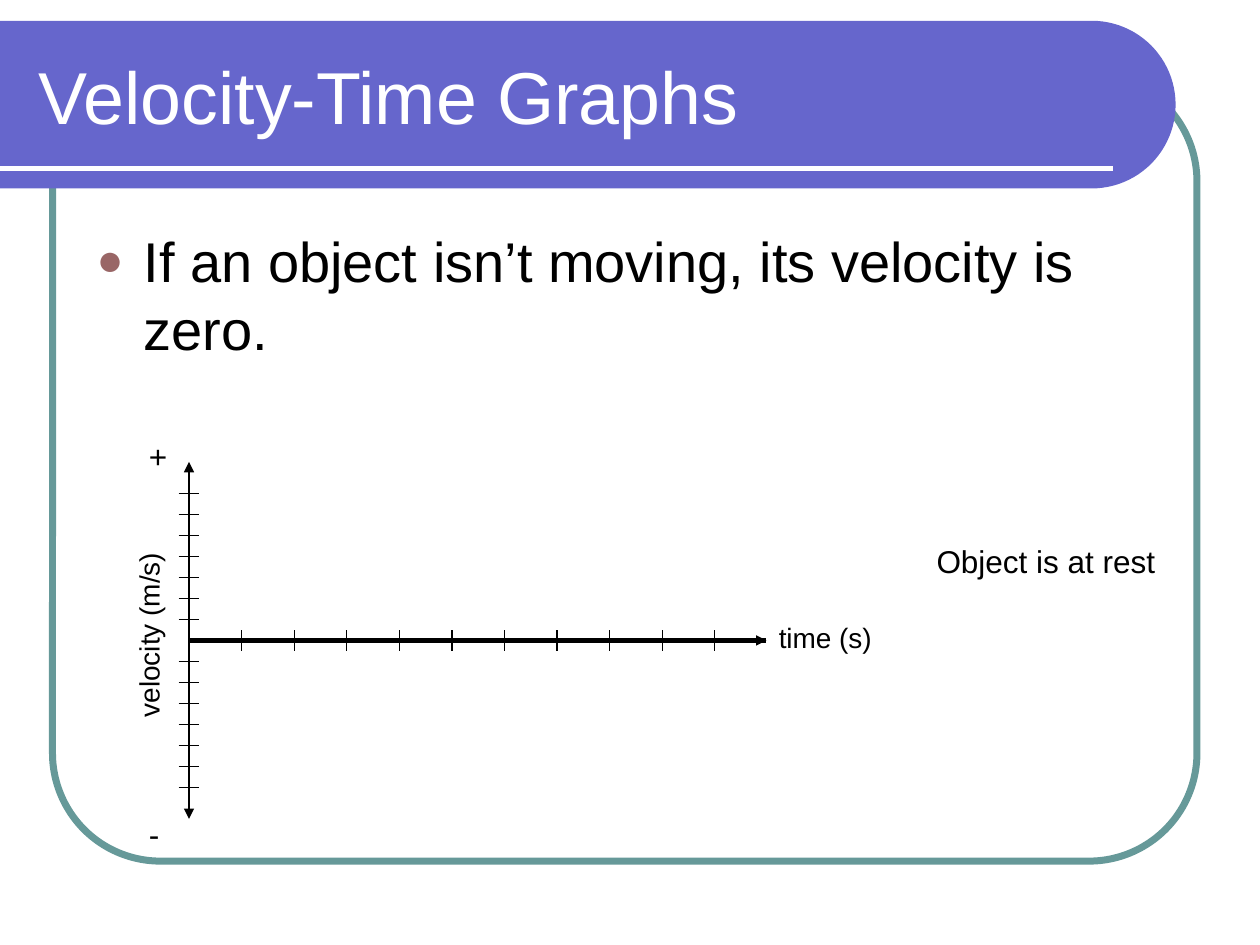
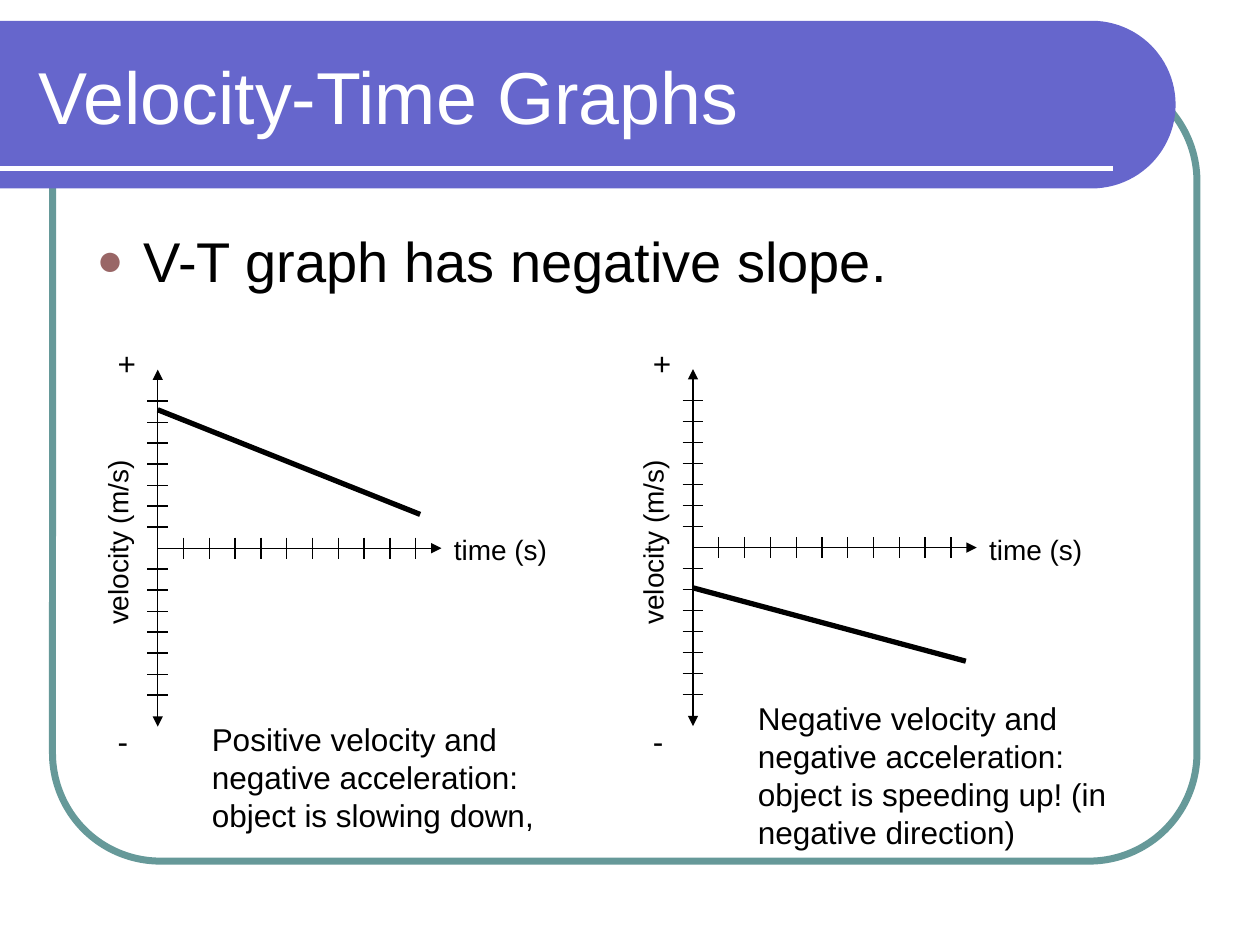
"""Build two slides on reading velocity-time graphs."""
from dataclasses import dataclass
from math import cos, pi, sin

from lxml.etree import SubElement
from pptx import Presentation
from pptx.dml.color import RGBColor
from pptx.enum.shapes import MSO_CONNECTOR as Conn, MSO_SHAPE as Shape
from pptx.enum.text import MSO_ANCHOR as Anchor, PP_ALIGN as Align
from pptx.oxml.ns import qn
from pptx.util import Cm, Pt

COLORS = {"band": "6666CC", "frame": "669999", "bullet": "996666",
          "ink": "000000", "paper": "FFFFFF"}
FONT = "Arial"
TICK_STEP = 1.27 / 3
TICK_HALF = 0.21
TICKS_PER_SIDE = 7
TIME_TICKS = 10
AXIS_HALF = 3.6

Point = tuple[float, float]
Box = tuple[float, float, float, float]


@dataclass(frozen=True)
class Caption:
    """A remark with its box in centimetres."""
    text: str
    box: Box


@dataclass(frozen=True)
class Graph:
    """Axes at an origin, with a trend given relative to that origin."""
    origin: Point
    length: float
    time_step: float
    time_label_dy: float
    trend: tuple[Point, Point]
    caption: Caption


@dataclass(frozen=True)
class GraphSlide:
    """A bullet and the graphs below it."""
    bullet: str
    graphs: tuple[Graph, ...]


SLIDES = (
    GraphSlide("If an object isn’t moving, its velocity is zero.", (
        Graph((3.81, 12.91), 11.64, 1.06, -0.52, ((0, 0), (11.64, 0)),
              Caption("Object is at rest", (18.63, 10.8, 5.93, 1.02))),
    )),
    GraphSlide("V-T graph has negative slope.", (
        Graph((3.18, 11.05), 5.72, 0.52, -0.43, ((0, -2.79), (5.29, -0.68)),
              Caption("Positive velocity and negative acceleration: "
                      "object is slowing down,", (4.02, 14.39, 8.47, 2.54))),
        Graph((13.97, 11.04), 5.72, 0.52, -0.43, ((0, 0.81), (5.5, 2.29)),
              Caption("Negative velocity and negative acceleration: object is "
                      "speeding up! (in negative direction)",
                      (15.03, 13.97, 8.47, 3.3))),
    )),
)


def rgb(name: str) -> RGBColor:
    """Look up a named colour."""
    return RGBColor.from_string(COLORS[name])


def add_text(shapes, text: str, box: Box, *, size: float = 18, color: str = "ink",
             align=Align.LEFT, anchor=Anchor.TOP, rotation: float = 0):
    """Add a wrapped text box and return its paragraph."""
    tb = shapes.add_textbox(*map(Cm, box))
    tb.rotation = rotation
    tf = tb.text_frame
    tf.word_wrap = True
    tf.vertical_anchor = anchor
    p = tf.paragraphs[0]
    p.alignment = align
    r = p.add_run()
    r.text = text
    r.font.name, r.font.size = FONT, Pt(size)
    r.font.color.rgb = rgb(color)
    return p


def add_line(shapes, start: Point, end: Point, *, width: float = 0.75,
             color: str = "ink", ends: tuple[str, ...] = ()) -> None:
    """Add a straight line with optional arrowheads."""
    c = shapes.add_connector(Conn.STRAIGHT, *map(Cm, (*start, *end)))
    c.line.width = Pt(width)
    c.line.color.rgb = rgb(color)
    sp_pr = c.element.spPr
    for tag in ends:
        SubElement(sp_pr.find(qn("a:ln")), qn(f"a:{tag}"), type="triangle")
    SubElement(sp_pr, qn("a:effectLst"))


def add_band(shapes) -> None:
    """Draw the title band with its half-round right end."""
    top, radius, center = 0.42, 1.69, 22.01
    steps = 48
    arc = [(Cm(center + radius * sin(pi * i / steps)),
            Cm(top + radius - radius * cos(pi * i / steps)))
           for i in range(steps + 1)]
    builder = shapes.build_freeform(0, Cm(top))
    builder.add_line_segments([*arc, (0, Cm(top + 2 * radius))], close=True)
    sp = builder.convert_to_shape()
    sp.shadow.inherit = False
    sp.fill.solid()
    sp.fill.fore_color.rgb = rgb("band")
    sp.line.fill.background()


def add_background(shapes) -> None:
    """Draw the frame, band, rule and title that every slide shares."""
    frame = shapes.add_shape(Shape.ROUNDED_RECTANGLE,
                             *map(Cm, (1.06, 1.48, 23.07, 15.88)))
    frame.adjustments[0] = 0.137
    frame.shadow.inherit = False
    frame.fill.background()
    frame.line.color.rgb = rgb("frame")
    frame.line.width = Pt(4)
    add_band(shapes)
    add_line(shapes, (0, 3.39), (22.44, 3.39), width=3, color="paper")
    add_text(shapes, "Velocity-Time Graphs", (0.53, 0.64, 22.28, 2.54),
             size=42, color="paper", anchor=Anchor.MIDDLE)


def add_bullet(shapes, text: str) -> None:
    """Add the body text with a coloured round bullet."""
    p = add_text(shapes, text, (1.7, 4.45, 22.01, 12.28), size=32)
    p_pr = p._p.get_or_add_pPr()
    indent = Cm(0.95)
    p_pr.set("marL", str(indent))
    p_pr.set("indent", str(-indent))
    SubElement(SubElement(p_pr, qn("a:buClr")), qn("a:srgbClr"),
               val=COLORS["bullet"])
    SubElement(p_pr, qn("a:buSzPct"), val="80000")
    SubElement(p_pr, qn("a:buFont"), typeface=FONT)
    SubElement(p_pr, qn("a:buChar"), char="●")


def add_graph(shapes, graph: Graph) -> None:
    """Draw the axes, ticks, labels, trend and caption of one graph."""
    x, y = graph.origin
    add_line(shapes, (x, y - AXIS_HALF), (x, y + AXIS_HALF),
             ends=("headEnd", "tailEnd"))
    add_line(shapes, (x, y), (x + graph.length, y), ends=("tailEnd",))
    for i in range(1, TICKS_PER_SIDE + 1):
        for ty in (y - i * TICK_STEP, y + i * TICK_STEP):
            add_line(shapes, (x - TICK_HALF, ty), (x + TICK_HALF, ty))
    for i in range(1, TIME_TICKS + 1):
        tx = x + i * graph.time_step
        add_line(shapes, (tx, y - TICK_HALF), (tx, y + TICK_HALF))
    add_text(shapes, "time (s)",
             (x + graph.length, y + graph.time_label_dy, 2.54, 0.94), size=16)
    add_text(shapes, "velocity (m/s)", (x - 2.82, y - 0.58, 4.02, 0.94),
             size=16, align=Align.CENTER, rotation=270)
    for sign, dy in (("+", -4.23), ("-", 3.39)):
        add_text(shapes, sign, (x - 1.06, y + dy, 1.06, 1.02))
    start, end = ((x + dx, y + dy) for dx, dy in graph.trend)
    add_line(shapes, start, end, width=3)
    add_text(shapes, graph.caption.text, graph.caption.box)


def main() -> None:
    """Build and save the presentation."""
    prs = Presentation()
    prs.slide_width, prs.slide_height = Cm(25.4), Cm(19.05)
    for content in SLIDES:
        s = prs.slides.add_slide(prs.slide_layouts[6])
        add_background(s.shapes)
        add_bullet(s.shapes, content.bullet)
        for graph in content.graphs:
            add_graph(s.shapes.add_group_shape().shapes, graph)
    prs.save("out.pptx")


if __name__ == "__main__":
    main()
